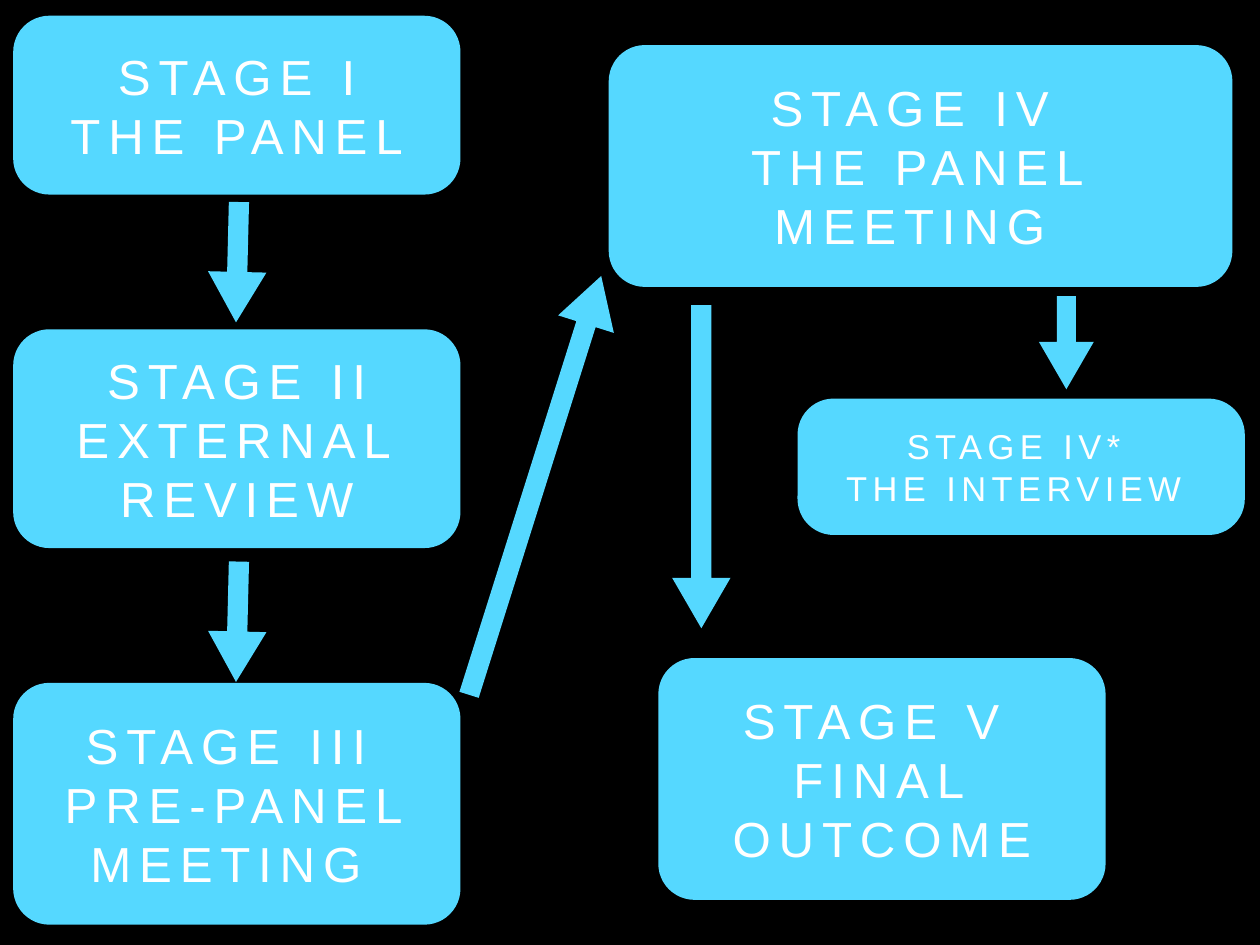
import math

from pptx import Presentation
from pptx.dml.color import RGBColor
from pptx.enum.shapes import MSO_SHAPE
from pptx.enum.text import MSO_ANCHOR, PP_ALIGN
from pptx.util import Inches, Pt

ROUNDED = MSO_SHAPE.ROUNDED_RECTANGLE
ARROW = MSO_SHAPE.RIGHT_ARROW
MIDDLE = MSO_ANCHOR.MIDDLE
CENTER = PP_ALIGN.CENTER

BLACK = RGBColor(0x00, 0x00, 0x00)
SKY = RGBColor(0x55, 0xD8, 0xFF)
WHITE = RGBColor(0xFF, 0xFF, 0xFF)

# Square grid: 100 columns across the slide
WIDTH, HEIGHT = 14.22, 10.67
CELL = WIDTH / 100
CORNER = 2.87  # corner radius in cells, the same on every stage
STAGE_WIDTH = 35.5
TALL = 19.2
LEFT_COLUMN = 1.05

# Wording, left, top, width, height in cells, text size
STAGES = [
    (("STAGE I", "THE PANEL"), LEFT_COLUMN, 1.25, STAGE_WIDTH, 14.2, 40),
    (("STAGE II", "EXTERNAL REVIEW"), LEFT_COLUMN, 26.15, STAGE_WIDTH, 17.37, 40),
    (("STAGE III ", "PRE-PANEL MEETING "), LEFT_COLUMN, 54.22, STAGE_WIDTH, TALL, 40),
    (("STAGE IV ", "THE PANEL MEETING "), 48.31, 3.58, 49.5, TALL, 40),
    (("STAGE V ", "FINAL OUTCOME"), 52.25, 52.25, STAGE_WIDTH, TALL, 40),
    (("STAGE IV* ", "THE INTERVIEW "), 63.3, 31.65, STAGE_WIDTH, 10.83, 28),
]

# Tail, tip and breadth in cells
FLOWS = [
    ((18.96, 16.04), (18.73, 25.6), 4.64),   # I to II
    ((18.96, 44.59), (18.73, 54.15), 4.64),  # II to III
    ((55.66, 24.23), (55.66, 49.89), 4.64),  # IV to V
    ((84.63, 23.52), (84.63, 30.91), 4.36),  # IV to the interview
    ((37.23, 55.17), (47.72, 21.91), 4.64),  # III to IV
]


def cells(count):
    return Inches(count * CELL)


def add_block(slide, preset, left, top, width, height):
    block = slide.shapes.add_shape(
        preset, cells(left), cells(top), cells(width), cells(height))
    block.shadow.inherit = False
    block.fill.solid()
    block.fill.fore_color.rgb = SKY
    block.line.fill.background()
    return block


def write_lines(frame, lines, size, color=WHITE, font="Arial", tracking=0.16):
    frame.word_wrap = True
    frame.vertical_anchor = MIDDLE
    frame.margin_left = frame.margin_right = Inches(0.06)
    frame.margin_top = frame.margin_bottom = Inches(0.06)
    for index, line in enumerate(lines):
        paragraph = frame.add_paragraph() if index else frame.paragraphs[0]
        paragraph.alignment = CENTER
        run = paragraph.add_run()
        run.text = line
        run.font.size = Pt(size)
        run.font.name = font
        run.font.color.rgb = color
        # Letter spacing, in hundredths of a point
        run.font._element.set("spc", str(round(size * tracking * 100)))


def add_stage(slide, lines, left, top, width, height, size):
    stage = add_block(slide, ROUNDED, left, top, width, height)
    stage.adjustments[0] = CORNER / height
    write_lines(stage.text_frame, lines, size)


def add_flow(slide, tail, tip, breadth):
    (x1, y1), (x2, y2) = tail, tip
    length = math.dist(tail, tip)
    flow = add_block(slide, ARROW, (x1 + x2 - length) / 2,
                     (y1 + y2 - breadth) / 2, length, breadth)
    flow.rotation = math.degrees(math.atan2(y2 - y1, x2 - x1)) % 360
    flow.adjustments[0] = 0.345
    flow.adjustments[1] = 0.864


def main():
    deck = Presentation()
    deck.slide_width, deck.slide_height = Inches(WIDTH), Inches(HEIGHT)
    slide = deck.slides.add_slide(deck.slide_layouts[6])
    slide.background.fill.solid()
    slide.background.fill.fore_color.rgb = BLACK

    for stage in STAGES:
        add_stage(slide, *stage)
    for flow in FLOWS:
        add_flow(slide, *flow)

    deck.save("out.pptx")


if __name__ == "__main__":
    main()
